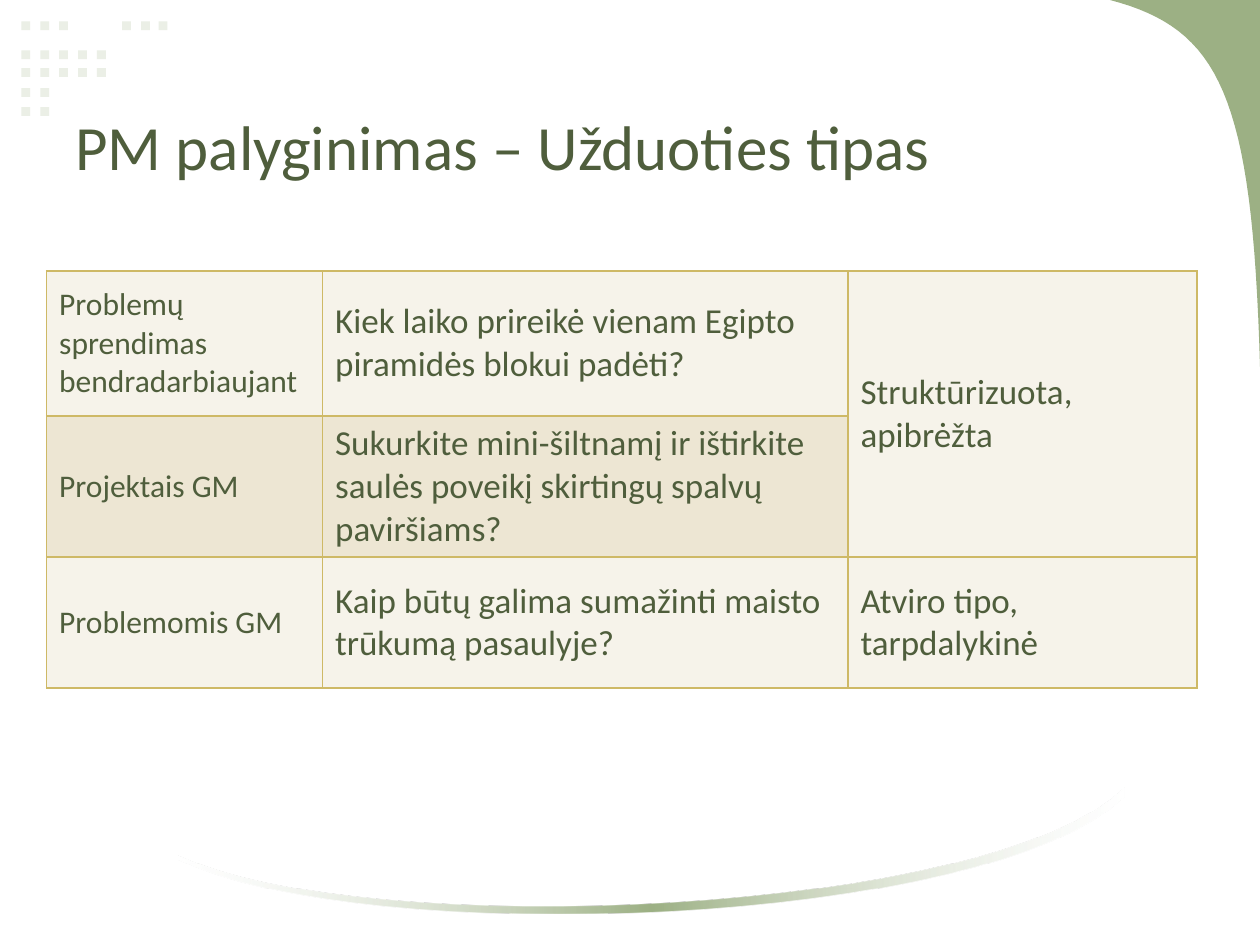
import pptx
import pptx.dml.color
import pptx.enum.shapes
import pptx.enum.text
import pptx.oxml
import pptx.oxml.ns
import pptx.util

# Grid of 100 columns by 75 rows over the slide
UNIT = pptx.util.Inches(0.1)
TEXT, SAGE, DOT, GOLD = "4F5E3C", "9CB084", "EBEFE6", "CEB966"
LIGHT, SAND = "F6F3EA", "EDE6D3"
colour = pptx.dml.color.RGBColor.from_string


def grid(*counts):
    return [pptx.util.Emu(round(count * UNIT)) for count in counts]


def curve(start, pull_a, pull_b, end, steps=32):
    """Points along a cubic curve given in grid units."""
    points = []
    for step in range(steps + 1):
        t = step / steps
        weights = ((1 - t) ** 3, 3 * t * (1 - t) ** 2, 3 * t * t * (1 - t), t ** 3)
        controls = zip(start, pull_a, pull_b, end)
        points.append(grid(*(sum(w * c for w, c in zip(weights, axis))
                             for axis in zip(start, pull_a, pull_b, end))))
    return points


deck = pptx.Presentation()
deck.slide_width, deck.slide_height = grid(100, 75)
page = deck.slides.add_slide(deck.slide_layouts[6])

# Dots in the top left corner
dot_columns = [1.7, 3.2, 4.7, 6.2, 7.7, 9.7, 11.2, 12.6]
dot_rows = {1.7: [0, 1, 2, 5, 6, 7], 4: range(5), 5.4: range(5), 7: range(2), 8.5: range(2)}
for top, columns in dot_rows.items():
    for column in columns:
        dot = page.shapes.add_shape(pptx.enum.shapes.MSO_SHAPE.RECTANGLE,
                                    *grid(dot_columns[column], top, 0.7, 0.7))
        dot.shadow.inherit = False
        dot.fill.solid()
        dot.fill.fore_color.rgb = colour(DOT)
        dot.line.fill.background()

# Curved corner and the swoosh at the foot
outlines = {
    "corner": curve((88.1, 0), (96.8, 2.3), (99.4, 7.5), (100, 29.1)) + [grid(100, 0)],
    "swoosh": curve((89.2, 63.2), (78.5, 73.7), (28.6, 75.3), (14.2, 68.2))
    + curve((14.2, 67.9), (29, 74.8), (78.9, 72.7), (89.2, 62.5)),
}
curved = {}
for name, points in outlines.items():
    builder = page.shapes.build_freeform(*points[0])
    builder.add_line_segments(points[1:], close=True)
    curved[name] = builder.convert_to_shape()
    curved[name].shadow.inherit = False
    curved[name].line.fill.background()
    curved[name].fill.solid()
    curved[name].fill.fore_color.rgb = colour(SAGE)

# The swoosh fades out to both ends
fade = '<a:srgbClr val="FFFFFF"><a:alpha val="30000"/></a:srgbClr>'
gradient = pptx.oxml.parse_xml(
    f'<a:gradFill {pptx.oxml.ns.nsdecls("a")}><a:gsLst><a:gs pos="0">{fade}</a:gs>'
    f'<a:gs pos="50000"><a:srgbClr val="{SAGE}"/></a:gs>'
    f'<a:gs pos="100000">{fade}</a:gs></a:gsLst><a:lin ang="0" scaled="0"/></a:gradFill>')
solid = curved["swoosh"].element.spPr.find(pptx.oxml.ns.qn("a:solidFill"))
solid.getparent().replace(solid, gradient)

# Table
rows = [
    ["Problemų sprendimas bendradarbiaujant",
     "Kiek laiko prireikė vienam Egipto piramidės blokui padėti?",
     "Struktūrizuota, apibrėžta"],
    ["Projektais GM",
     "Sukurkite mini-šiltnamį ir ištirkite saulės poveikį skirtingų spalvų paviršiams?", ""],
    ["Problemomis GM",
     "Kaip būtų galima sumažinti maisto trūkumą pasaulyje?",
     "Atviro tipo, tarpdalykinė"],
]
frame = page.shapes.add_table(3, 3, *grid(3.7, 21.5, 91.3, 33))
table = frame.table
for column, width in zip(table.columns, grid(21.9, 41.7, 27.7)):
    column.width = width
for row, height in zip(table.rows, grid(11.5, 9, 10.4)):
    row.height = height
frame.height = grid(33)[0]
table.cell(0, 2).merge(table.cell(1, 2))

spans = []
for r, texts in enumerate(rows):
    for c, text in enumerate(texts):
        cell = table.cell(r, c)
        cell.vertical_anchor = pptx.enum.text.MSO_ANCHOR.MIDDLE
        for side in ("lnL", "lnR", "lnT", "lnB"):
            cell._tc.get_or_add_tcPr().append(pptx.oxml.parse_xml(
                f'<a:{side} {pptx.oxml.ns.nsdecls("a")} w="12700"><a:solidFill>'
                f'<a:srgbClr val="{GOLD}"/></a:solidFill></a:{side}>'))
        cell.fill.solid()
        cell.fill.fore_color.rgb = colour(SAND if r == 1 else LIGHT)
        if text:
            span = cell.text_frame.paragraphs[0].add_run()
            span.text = text
            spans.append((span, 18 if c == 0 else 20))

# Title
box = page.shapes.add_textbox(*grid(5, 3, 90, 12.5)).text_frame
margin = grid(1)[0]
box_format = {"word_wrap": True, "vertical_anchor": pptx.enum.text.MSO_ANCHOR.BOTTOM,
              "margin_left": margin, "margin_right": margin,
              "margin_top": margin, "margin_bottom": margin}
for key, value in box_format.items():
    setattr(box, key, value)
span = box.paragraphs[0].add_run()
span.text = "PM palyginimas – Užduoties tipas"
spans.append((span, 36))

# Type
for span, size in spans:
    for key, value in {"name": "Calibri", "size": pptx.util.Pt(size), "bold": False}.items():
        setattr(span.font, key, value)
    span.font.color.rgb = colour(TEXT)

deck.save("out.pptx")
